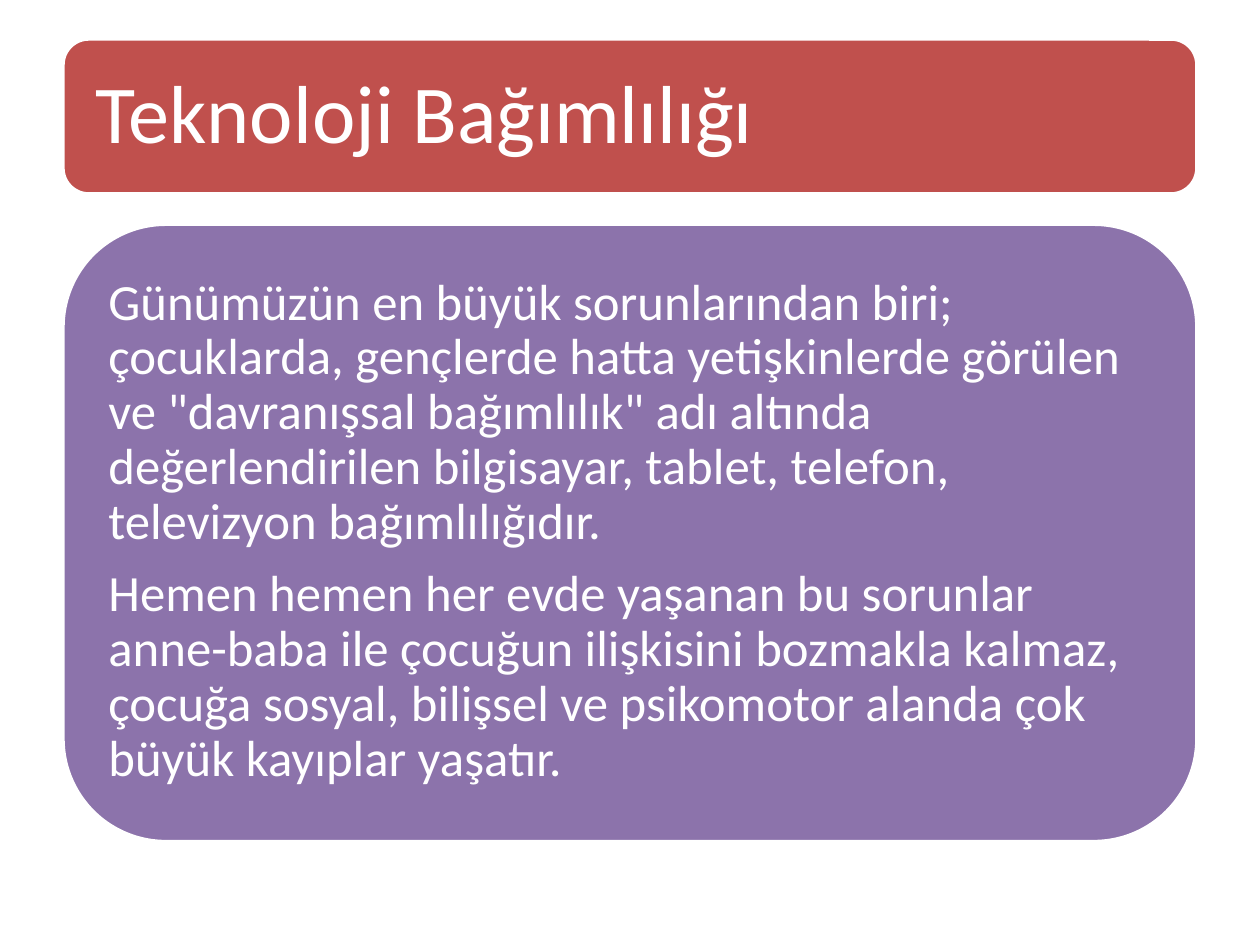
from lxml.etree import SubElement
from pptx import Presentation
from pptx.dml.color import RGBColor
from pptx.enum.shapes import MSO_SHAPE
from pptx.enum.text import MSO_ANCHOR, MSO_AUTO_SIZE, PP_ALIGN
from pptx.oxml.ns import qn
from pptx.util import Inches, Pt

COLORS = {"title": "C0504D", "body": "8064A2", "light": "FFFFFF"}
FONT = "Calibri"

TITLE = "Teknoloji Bağımlılığı"
BODY = [
    "Günümüzün en büyük sorunlarından biri; çocuklarda, gençlerde hatta "
    "yetişkinlerde görülen ve \"davranışsal bağımlılık\" adı altında "
    "değerlendirilen bilgisayar, tablet, telefon, televizyon bağımlılığıdır.",
    "Hemen hemen her evde yaşanan bu sorunlar anne-baba ile çocuğun ilişkisini "
    "bozmakla kalmaz, çocuğa sosyal, bilişsel ve psikomotor alanda çok büyük "
    "kayıplar yaşatır.",
]


class SlideBuilder:
    def __init__(self, slide):
        self.slide = slide

    def color(self, name):
        return RGBColor.from_string(COLORS[name])

    def panel(self, behind, top, height, fill, opacity=100):
        sp = self.slide.shapes.add_shape(
            MSO_SHAPE.ROUNDED_RECTANGLE,
            Inches(0.5), Inches(top), Inches(9), Inches(height))
        sp.shadow.inherit = False
        sp.fill.solid()
        sp.fill.fore_color.rgb = self.color(fill)
        if opacity < 100:
            clr = sp.element.spPr.find(qn("a:solidFill"))[0]
            SubElement(clr, qn("a:alpha"), val=str(opacity * 1000))
        sp.line.color.rgb = self.color("light")
        sp.line.width = Pt(2)
        behind.element.addprevious(sp.element)

    def text(self, sp, box, paragraphs, size, inset):
        sp.left, sp.top, sp.width, sp.height = (Inches(v) for v in box)
        tf = sp.text_frame
        tf.word_wrap = True
        tf.auto_size = MSO_AUTO_SIZE.NONE
        tf.vertical_anchor = MSO_ANCHOR.MIDDLE
        tf.margin_left = tf.margin_right = Inches(inset)
        tf.margin_top = tf.margin_bottom = Inches(inset)
        tf.text = "\n".join(paragraphs)
        for p in tf.paragraphs:
            p.alignment = PP_ALIGN.LEFT
            p.line_spacing = 0.9
            p.space_before = Pt(0)
            p.space_after = Pt(round(size * 0.35))
            p.font.name = FONT
            p.font.size = Pt(size)
            p.font.color.rgb = self.color("light")
            pPr = p._p.get_or_add_pPr()
            pPr.set("marL", "0")
            pPr.set("indent", "0")
            pPr.find(qn("a:defRPr")).addprevious(
                pPr.makeelement(qn("a:buNone"), {}))


def main():
    prs = Presentation()
    prs.slide_width, prs.slide_height = Inches(10), Inches(7.5)
    s = prs.slides.add_slide(prs.slide_layouts[1])
    title, body = s.shapes.title, s.placeholders[1]

    builder = SlideBuilder(s)
    builder.panel(title, 0.31, 1.23, "title")
    builder.text(title, (0.56, 0.37, 8.88, 1.11), [TITLE], 47, 0.2)
    builder.panel(body, 1.78, 4.9, "body", opacity=90)
    builder.text(body, (0.74, 2.01, 8.52, 4.42), BODY, 29, 0.12)
    prs.save("out.pptx")


if __name__ == "__main__":
    main()
